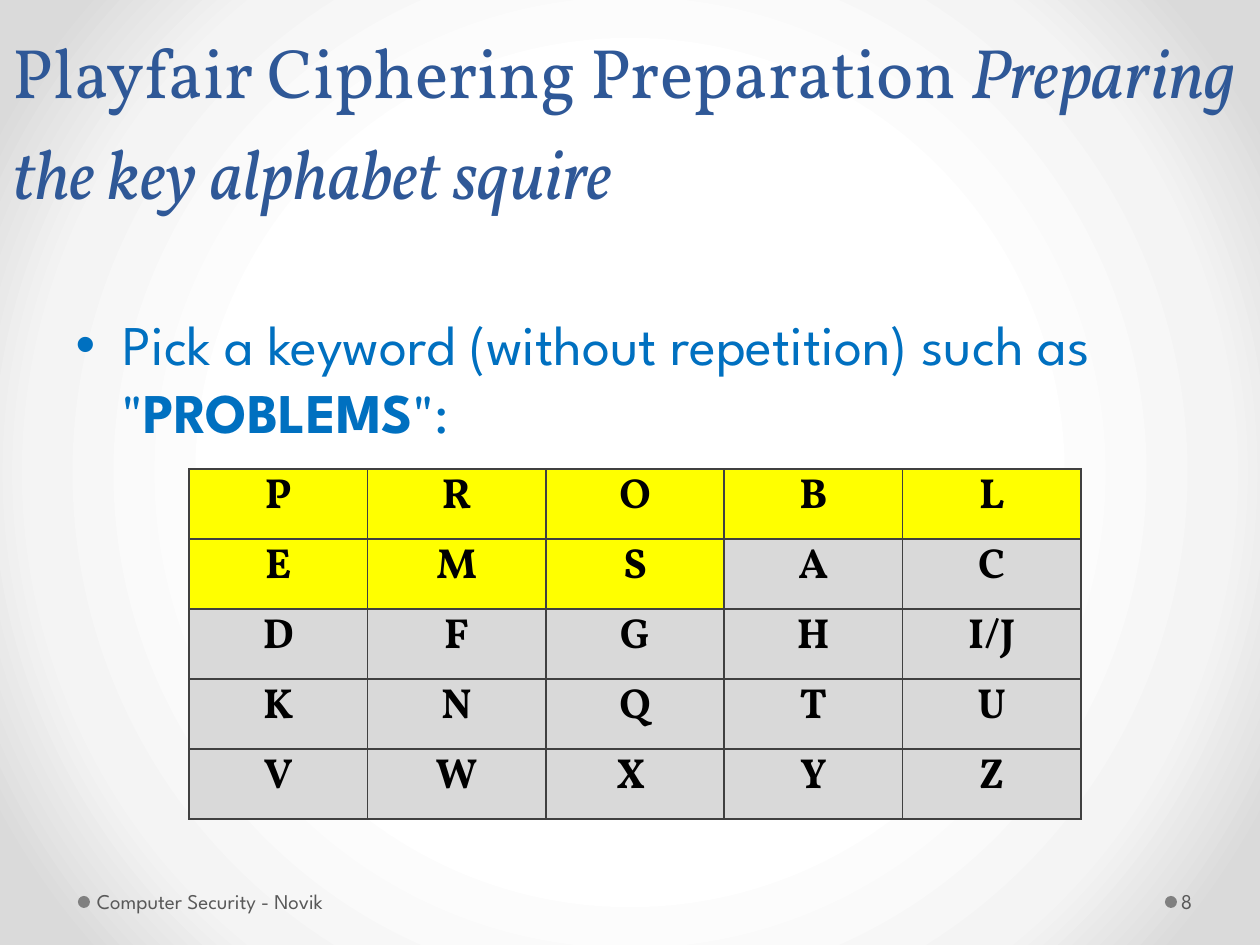
import dataclasses
import typing

import lxml.etree
import pptx
import pptx.dml.color
import pptx.enum.shapes
import pptx.enum.text
import pptx.oxml
import pptx.oxml.ns
import pptx.util

EMU_PER_PX = 914400 / 126

NAVY = pptx.dml.color.RGBColor(0x2F, 0x58, 0x97)
BLUE = pptx.dml.color.RGBColor(0x00, 0x70, 0xC0)
BLACK = pptx.dml.color.RGBColor(0x00, 0x00, 0x00)
YELLOW = pptx.dml.color.RGBColor(0xFF, 0xFF, 0x00)
LIGHT_GRAY = pptx.dml.color.RGBColor(0xD9, 0xD9, 0xD9)
DOT_GRAY = pptx.dml.color.RGBColor(0x80, 0x80, 0x80)
FOOTER_GRAY = pptx.dml.color.RGBColor(0x59, 0x59, 0x59)
BORDER_GRAY = pptx.dml.color.RGBColor(0x40, 0x40, 0x40)
BACKDROP_STOPS = (
    (50, pptx.dml.color.RGBColor(0xFF, 0xFF, 0xFF)),
    (76, pptx.dml.color.RGBColor(0xF4, 0xF4, 0xF4)),
    (92, pptx.dml.color.RGBColor(0xDA, 0xDA, 0xDA)),
)

SERIF = "Vollkorn"
SANS = "League Spartan"

KEYWORD = "PROBLEMS"
KEY_SQUARE = (
    ("P", "R", "O", "B", "L"),
    ("E", "M", "S", "A", "C"),
    ("D", "F", "G", "H", "I/J"),
    ("K", "N", "Q", "T", "U"),
    ("V", "W", "X ", "Y", "Z"),
)


@dataclasses.dataclass(frozen=True)
class TextStyle:
    font: str
    size: int
    color: pptx.dml.color.RGBColor
    bold: bool = False
    italic: bool = False


@dataclasses.dataclass(frozen=True)
class FooterItem:
    text: str
    dot_left: int
    left: int
    width: int
    inset_left: int


TITLE = TextStyle(SERIF, 40, NAVY)
BODY = TextStyle(SANS, 32, BLUE)
CELL = TextStyle(SERIF, 24, BLACK, bold=True)
FOOTER = TextStyle(SANS, 12, FOOTER_GRAY)

FOOTER_ITEMS = (
    FooterItem("Computer Security - Novik", 78, 91, 392, 6),
    FooterItem("8", 1165, 1177, 77, 4),
)


def px(length: int) -> pptx.util.Emu:
    return pptx.util.Emu(round(length * EMU_PER_PX))


def place(shape: typing.Any, left: int, top: int, width: int, height: int) -> None:
    shape.left, shape.top = px(left), px(top)
    shape.width, shape.height = px(width), px(height)


def add_run(paragraph: typing.Any, text: str, style: TextStyle) -> None:
    run = paragraph.add_run()
    run.text = text
    run.font.name = style.font
    run.font.size = pptx.util.Pt(style.size)
    run.font.color.rgb = style.color
    run.font.bold = style.bold
    run.font.italic = style.italic


def paint_backdrop(slide: typing.Any) -> None:
    """Fill the background with a gradient that darkens away from the centre."""
    slide.background.fill.gradient()
    gradient = next(slide.element.iter(pptx.oxml.ns.qn("a:gradFill")))
    stops = "".join(
        f'<a:gs pos="{percent * 1000}"><a:srgbClr val="{color}"/></a:gs>'
        for percent, color in BACKDROP_STOPS
    )
    radial = pptx.oxml.parse_xml(
        f'<a:gradFill {pptx.oxml.ns.nsdecls("a")} rotWithShape="1">'
        f"<a:gsLst>{stops}</a:gsLst>"
        '<a:path path="circle">'
        '<a:fillToRect l="50000" t="50000" r="50000" b="50000"/>'
        "</a:path></a:gradFill>"
    )
    gradient.getparent().replace(gradient, radial)


def fill_title(title: typing.Any) -> None:
    place(title, 0, 0, 1255, 220)
    frame = title.text_frame
    frame.vertical_anchor = pptx.enum.text.MSO_ANCHOR.BOTTOM
    frame.auto_size = pptx.enum.text.MSO_AUTO_SIZE.NONE
    paragraph = frame.paragraphs[0]
    paragraph.alignment = pptx.enum.text.PP_ALIGN.LEFT
    paragraph.line_spacing = pptx.util.Pt(58)
    add_run(paragraph, "Playfair Ciphering Preparation ", TITLE)
    add_run(paragraph, "Preparing the key alphabet squire",
            dataclasses.replace(TITLE, italic=True))


def fill_body(body: typing.Any) -> None:
    place(body, 63, 220, 1192, 624)
    frame = body.text_frame
    frame.auto_size = pptx.enum.text.MSO_AUTO_SIZE.NONE
    frame.margin_top = px(90)
    paragraph = frame.paragraphs[0]
    paragraph.space_before = pptx.util.Pt(0)
    add_run(paragraph, 'Pick a keyword (without repetition) such as "', BODY)
    add_run(paragraph, KEYWORD, dataclasses.replace(BODY, bold=True))
    add_run(paragraph, '":', BODY)


def add_footer_item(slide: typing.Any, item: FooterItem) -> None:
    dot = slide.shapes.add_shape(
        pptx.enum.shapes.MSO_SHAPE.OVAL, px(item.dot_left), px(896), px(12), px(12))
    dot.shadow.inherit = False
    dot.fill.solid()
    dot.fill.fore_color.rgb = DOT_GRAY
    dot.line.fill.background()

    label = slide.shapes.add_textbox(px(item.left), px(876), px(item.width), px(50))
    frame = label.text_frame
    frame.word_wrap = True
    frame.vertical_anchor = pptx.enum.text.MSO_ANCHOR.MIDDLE
    frame.margin_left = px(item.inset_left)
    frame.margin_top = frame.margin_bottom = frame.margin_right = px(6)
    add_run(frame.paragraphs[0], item.text, FOOTER)


def draw_borders(cell: typing.Any) -> None:
    properties = cell._tc.get_or_add_tcPr()
    for position, side in enumerate(("lnL", "lnR", "lnT", "lnB")):
        border = lxml.etree.Element(
            pptx.oxml.ns.qn(f"a:{side}"), w=str(pptx.util.Pt(1)))
        fill = lxml.etree.SubElement(border, pptx.oxml.ns.qn("a:solidFill"))
        lxml.etree.SubElement(
            fill, pptx.oxml.ns.qn("a:srgbClr"), val=str(BORDER_GRAY))
        properties.insert(position, border)


def add_key_square(slide: typing.Any) -> None:
    table = slide.shapes.add_table(
        len(KEY_SQUARE), len(KEY_SQUARE[0]), px(189), px(469), px(892), px(350)).table
    table.first_row = False
    table.horz_banding = False
    for row, letters in enumerate(KEY_SQUARE):
        for column, letter in enumerate(letters):
            cell = table.cell(row, column)
            cell.margin_left = cell.margin_right = px(9)
            cell.margin_top = cell.margin_bottom = 0
            cell.fill.solid()
            cell.fill.fore_color.rgb = YELLOW if letter in KEYWORD else LIGHT_GRAY
            draw_borders(cell)
            paragraph = cell.text_frame.paragraphs[0]
            paragraph.alignment = pptx.enum.text.PP_ALIGN.CENTER
            add_run(paragraph, letter, CELL)


def main() -> None:
    presentation = pptx.Presentation()
    presentation.slide_width = px(1260)
    presentation.slide_height = px(945)
    slide = presentation.slides.add_slide(presentation.slide_layouts[1])
    paint_backdrop(slide)
    fill_title(slide.shapes.title)
    fill_body(slide.placeholders[1])
    for item in FOOTER_ITEMS:
        add_footer_item(slide, item)
    add_key_square(slide)
    presentation.save("out.pptx")


if __name__ == "__main__":
    main()
